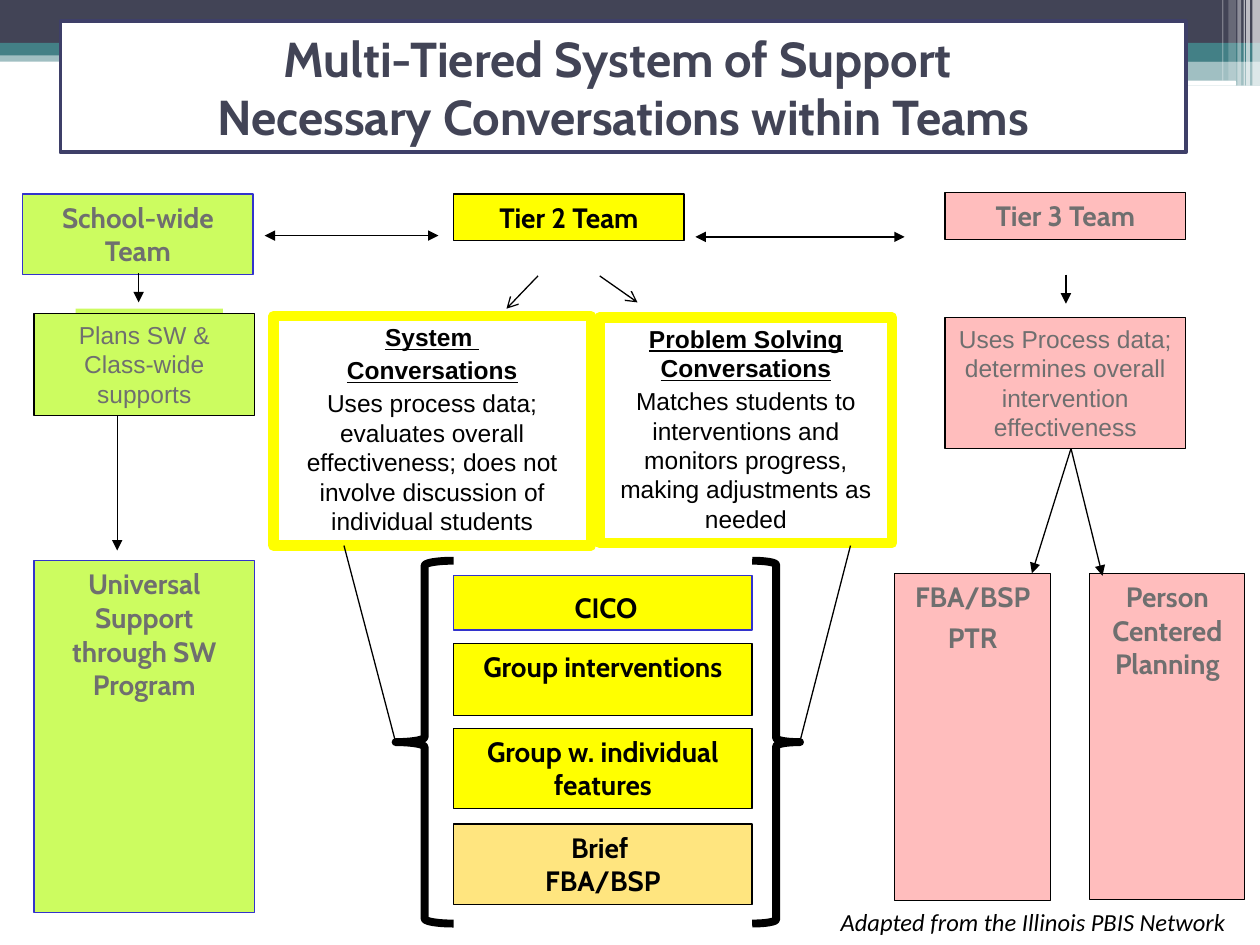
from dataclasses import dataclass
from typing import Optional

from lxml import etree
from pptx import Presentation
from pptx.dml.color import RGBColor
from pptx.enum.shapes import MSO_CONNECTOR, MSO_SHAPE
from pptx.enum.text import MSO_ANCHOR, MSO_AUTO_SIZE, PP_ALIGN
from pptx.oxml.ns import qn
from pptx.util import Inches, Pt

RECT, ROUND_RECT = MSO_SHAPE.RECTANGLE, MSO_SHAPE.ROUNDED_RECTANGLE
LEFT_BRACE, RIGHT_BRACE = MSO_SHAPE.LEFT_BRACE, MSO_SHAPE.RIGHT_BRACE
STRAIGHT = MSO_CONNECTOR.STRAIGHT
CENTER, RIGHT = PP_ALIGN.CENTER, PP_ALIGN.RIGHT
TOP, MIDDLE = MSO_ANCHOR.TOP, MSO_ANCHOR.MIDDLE


@dataclass(frozen=True)
class Theme:
    slate: str = "424456"
    teal: str = "438086"
    navy: str = "3E3F68"
    blue: str = "3333CC"
    white: str = "FFFFFF"
    black: str = "000000"
    gray: str = "6F6F6F"
    green: str = "CCFC60"
    yellow: str = "FFFF00"
    amber: str = "FFCC00"
    pink: str = "FFBDBD"
    heading: str = "Cabin"
    body: str = "Arial"
    credit: str = "Calibri"
    title_size: int = 28
    heading_size: int = 16
    body_size: int = 14


T = Theme()


@dataclass(frozen=True)
class Band:
    """A plain bar of the slide's top decoration."""
    at: tuple
    color: str
    alpha: int = 100
    kind: int = RECT


@dataclass(frozen=True)
class Box:
    """A team, conversation or intervention box; its first `heads` lines are underlined."""
    at: tuple
    lines: tuple
    fill: str
    color: str = T.black
    line: str = T.black
    line_width: float = 0.75
    alpha: int = 100
    is_body: bool = False
    heads: int = 0
    gap: float = 0
    top_inset: float = 0.05


@dataclass(frozen=True)
class Link:
    start: tuple
    end: tuple
    head: Optional[str] = None
    tail: Optional[str] = None


BANDS = [
    Band((0, 0.4, 10, 0.09), T.teal, 50),
    Band((0, 0, 10, 0.34), T.slate),
    Band((0, 0.34, 10, 0.1), T.teal),
    Band((5.92, 0.39, 4.08, 0.1), T.teal),
    Band((5.92, 0.48, 4.08, 0.2), T.teal, 50),
    Band((8.06, 0.64, 1.75, 0.04), T.white, kind=ROUND_RECT),
    # Translucent stripes in the right corner
    *(Band((x, 0, w, h), T.white, a) for x, w, h, a in [
        (9.94, 0.06, 0.68, 65), (9.89, 0.03, 0.68, 65), (9.87, 0.01, 0.68, 60),
        (9.82, 0.03, 0.68, 40), (9.75, 0.06, 0.64, 20), (9.7, 0.01, 0.64, 30)]),
    # Tab behind the school-wide plans
    Band((0.6, 2.45, 1.17, 0.4), T.green),
]

BOXES = [
    # School-wide column
    Box((0.18, 1.54, 1.83, 0.64), ("School-wide\vTeam",), T.green, T.gray, T.blue),
    Box((0.27, 2.49, 1.75, 0.81), ("Plans SW & Class-wide supports",), T.green, T.gray,
        is_body=True),
    Box((0.27, 4.45, 1.75, 2.79), ("Universal Support through SW Program",), T.green,
        T.gray, T.blue),
    # Tier 2 column
    Box((3.6, 1.54, 1.83, 0.37), ("Tier 2 Team",), T.yellow),
    Box((2.17, 2.51, 2.52, 1.82),
        ("System ", "Conversations", "Uses process data; evaluates overall effectiveness; "
         "does not involve discussion of individual students"),
        T.white, line=T.yellow, line_width=6, is_body=True, heads=2, gap=2),
    Box((4.76, 2.52, 2.32, 1.79),
        ("Problem Solving Conversations", "Matches students to interventions and monitors "
         "progress, making adjustments as needed"),
        T.white, line=T.yellow, line_width=6, is_body=True, heads=1, gap=2),
    Box((3.6, 4.57, 2.37, 0.43), (" CICO",), T.yellow, line=T.blue, top_inset=0.12),
    Box((3.6, 5.11, 2.37, 0.57), ("Group interventions",), T.yellow),
    Box((3.6, 5.78, 2.37, 0.64), ("Group w. individual", "features"), T.yellow),
    Box((3.6, 6.54, 2.37, 0.64), ("Brief ", "FBA/BSP"), T.amber, alpha=50),
    # Tier 3 column
    Box((7.5, 1.53, 1.91, 0.37), ("Tier 3 Team",), T.pink, T.gray),
    Box((7.5, 2.52, 1.91, 1.04),
        ("Uses Process data; determines overall intervention effectiveness",),
        T.pink, T.gray, is_body=True),
    Box((7.1, 4.55, 1.24, 2.6), ("FBA/BSP", "PTR"), T.pink, T.gray, gap=4),
    Box((8.65, 4.55, 1.23, 2.59), ("Person Centered Planning",), T.pink, T.gray),
]

LINKS = [
    # Between teams
    Link((2.1, 1.87), (3.48, 1.87), "triangle", "triangle"),
    Link((5.52, 1.88), (7.18, 1.88), "triangle", "triangle"),
    # Down each column
    Link((1.1, 2.17), (1.1, 2.4), tail="triangle"),
    Link((0.93, 3.3), (0.93, 4.37), tail="triangle"),
    Link((4.27, 2.19), (4.02, 2.45), tail="arrow"),
    Link((4.76, 2.19), (5.06, 2.4), tail="arrow"),
    Link((8.46, 2.18), (8.46, 2.41), tail="triangle"),
    Link((8.5, 3.56), (8.19, 4.55), tail="triangle"),
    Link((8.5, 3.56), (8.75, 4.57), tail="triangle"),
    # Conversations to braces
    Link((2.73, 4.33), (3.14, 5.89)),
    Link((6.75, 4.33), (6.35, 5.88)),
]


def write_text(tf, lines, *, font, size, color, bold=False, italic=False, heads=0,
               gap=0.0, align=CENTER, anchor=TOP, top_inset=0.05) -> None:
    tf.word_wrap, tf.auto_size, tf.vertical_anchor = True, MSO_AUTO_SIZE.NONE, anchor
    tf.margin_left = tf.margin_right = Inches(0.1)
    tf.margin_top, tf.margin_bottom = Inches(top_inset), Inches(0.05)
    for i, line in enumerate(lines):
        p = tf.add_paragraph() if i else tf.paragraphs[0]
        p.text, p.alignment = line, align
        p.space_before = Pt(gap if i else 0)
        for r in p.runs:
            r.font.name, r.font.size = font, Pt(size)
            r.font.bold, r.font.italic = bold or i < heads, italic
            r.font.underline = i < heads
            r.font.color.rgb = RGBColor.from_string(color)


def paint(sp, fill: Optional[str], line: Optional[str] = None, width: float = 0.75,
          alpha: int = 100) -> None:
    if fill:
        sp.fill.solid()
        sp.fill.fore_color.rgb = RGBColor.from_string(fill)
        if alpha < 100:
            clr = sp.element.spPr.find(qn("a:solidFill"))[0]
            etree.SubElement(clr, qn("a:alpha")).set("val", str(alpha * 1000))
    else:
        sp.fill.background()
    if line:
        sp.line.color.rgb = RGBColor.from_string(line)
        sp.line.width = Pt(width)
    else:
        sp.line.fill.background()


def add_shape(s, kind: int, at: tuple, fill: Optional[str], **look):
    sp = s.shapes.add_shape(kind, *map(Inches, at))
    sp.shadow.inherit = False
    paint(sp, fill, **look)
    return sp


def add_box(s, box: Box) -> None:
    sp = add_shape(s, RECT, box.at, box.fill, line=box.line, width=box.line_width,
                   alpha=box.alpha)
    write_text(sp.text_frame, box.lines, color=box.color, bold=not box.is_body,
               font=T.body if box.is_body else T.heading,
               size=T.body_size if box.is_body else T.heading_size,
               heads=box.heads, gap=box.gap, top_inset=box.top_inset)


def add_link(s, link: Link) -> None:
    c = s.shapes.add_connector(STRAIGHT, *map(Inches, link.start + link.end))
    c.line.color.rgb = RGBColor.from_string(T.black)
    c.line.width = Pt(0.75)
    for tag, kind in (("a:headEnd", link.head), ("a:tailEnd", link.tail)):
        if kind:
            etree.SubElement(c.line._get_or_add_ln(), qn(tag)).set("type", kind)
    etree.SubElement(c.element.spPr, qn("a:effectLst"))


def add_title(s) -> None:
    sp = s.shapes.title
    sp.left, sp.top, sp.width, sp.height = map(Inches, (0.48, 0.17, 8.93, 1.04))
    paint(sp, T.white, T.navy, 2.25)
    write_text(sp.text_frame, ("Multi-Tiered System of Support ",
                               "Necessary Conversations within Teams"),
               font=T.heading, size=T.title_size, color=T.slate, bold=True, anchor=MIDDLE)
    sp.element.getparent().append(sp.element)  # in front of the bands


def main() -> None:
    prs = Presentation()
    prs.slide_width, prs.slide_height = Inches(10), Inches(7.5)
    s = prs.slides.add_slide(prs.slide_layouts[5])
    for band in BANDS:
        add_shape(s, band.kind, band.at, band.color, alpha=band.alpha)
    add_title(s)
    for box in BOXES:
        add_box(s, box)
    # Braces around the interventions
    for kind, left, width in ((LEFT_BRACE, 3.14, 0.46), (RIGHT_BRACE, 5.97, 0.38)):
        add_shape(s, kind, (left, 4.45, width, 2.88), None, line=T.black, width=4.5)
    for link in LINKS:
        add_link(s, link)
    # Credit line
    tb = s.shapes.add_textbox(*map(Inches, (5.7, 7.15, 4.17, 0.34)))
    write_text(tb.text_frame, ("Adapted from the Illinois PBIS Network ",), font=T.credit,
               size=T.body_size, color=T.black, italic=True, align=RIGHT)
    prs.save("out.pptx")


if __name__ == "__main__":
    main()
